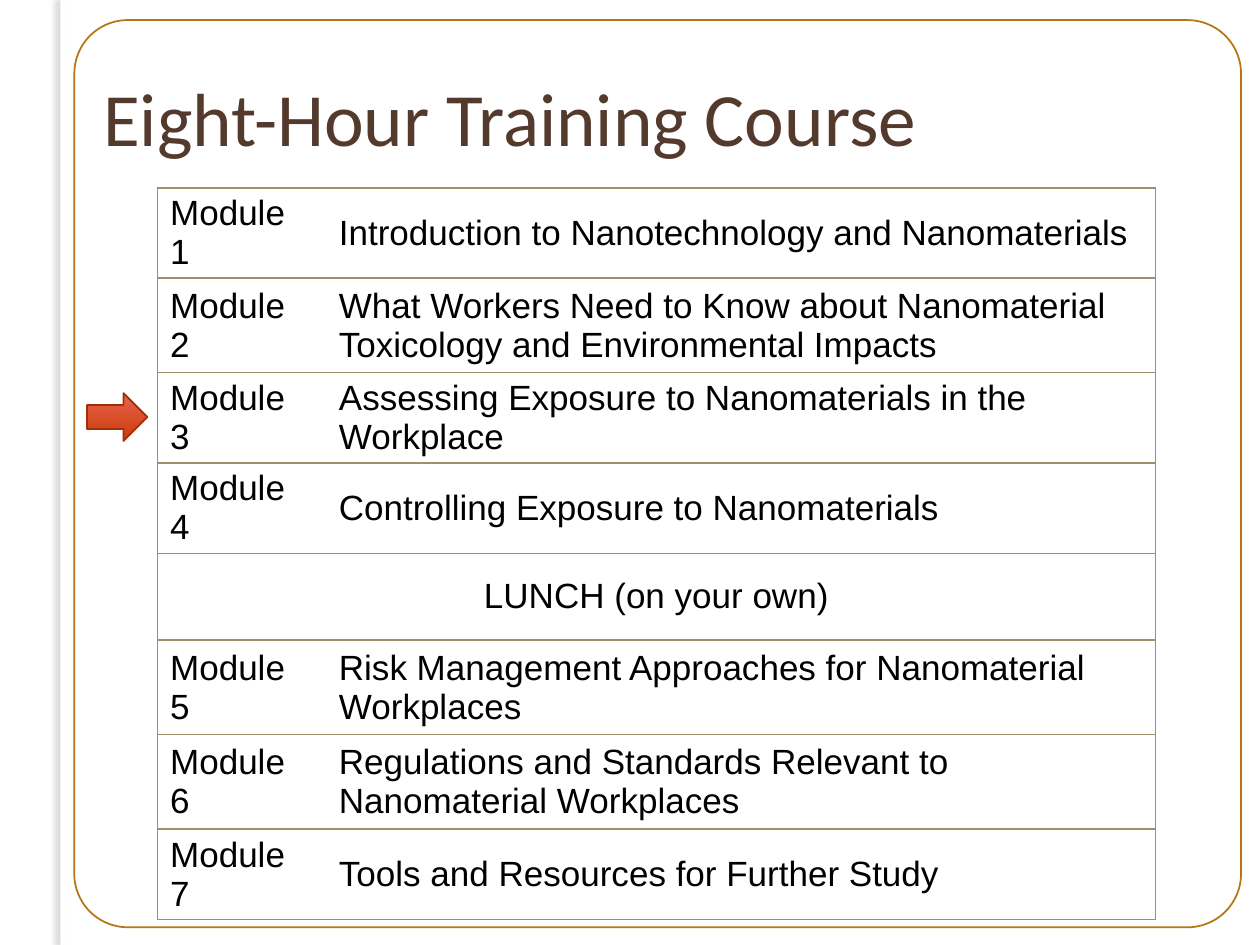
from lxml import etree
from pptx import Presentation
from pptx.dml.color import RGBColor
from pptx.enum.shapes import MSO_SHAPE as Shape
from pptx.enum.text import MSO_ANCHOR as Anchor, PP_ALIGN as Align
from pptx.oxml import parse_xml
from pptx.oxml.ns import nsdecls, qn
from pptx.util import Inches, Pt

BORDER = "A28E6A"
LUNCH = "LUNCH (on your own)"
AGENDA = [
    ("Module 1", "Introduction to Nanotechnology and Nanomaterials"),
    ("Module 2", "What Workers Need to Know about Nanomaterial Toxicology and Environmental Impacts"),
    ("Module 3", "Assessing Exposure to Nanomaterials in the Workplace"),
    ("Module 4", "Controlling Exposure to Nanomaterials"),
    (LUNCH, ""),
    ("Module 5", "Risk Management Approaches for Nanomaterial Workplaces"),
    ("Module 6", "Regulations and Standards Relevant to Nanomaterial Workplaces"),
    ("Module 7", "Tools and Resources for Further Study"),
]
TALL_ROWS = (1, 5, 6)
COLUMN_WIDTHS = (1.34, 6.58)


def color(hex_code):
    return RGBColor.from_string(hex_code)


def style_text(paragraph, font_name, size, hex_code):
    for run in paragraph.runs:
        run.font.name = font_name
        run.font.size = Pt(size)
        run.font.color.rgb = color(hex_code)


def add_shape(slide, kind, left, top, width, height, fill=None, line=None):
    shape = slide.shapes.add_shape(
        kind, Inches(left), Inches(top), Inches(width), Inches(height))
    shape.shadow.inherit = False
    if fill:
        shape.fill.solid()
        shape.fill.fore_color.rgb = color(fill)
    else:
        shape.fill.background()
    if line:
        shape.line.color.rgb = color(line)
        shape.line.width = Pt(1)
    else:
        shape.line.fill.background()
    return shape


def add_left_shadow(shape, hex_code):
    effects = shape.element.spPr.find(qn("a:effectLst"))
    effects.append(parse_xml(
        f'<a:outerShdw {nsdecls("a")} blurRad="{Pt(3)}" dist="{Pt(3)}" dir="10800000" '
        f'algn="ctr" rotWithShape="0"><a:srgbClr val="{hex_code}">'
        '<a:alpha val="25000"/></a:srgbClr></a:outerShdw>'))


def add_frame(slide):
    band = add_shape(slide, Shape.RECTANGLE, 0.48, 0, 0.08, 7.5, fill="FFFFFF")
    add_left_shadow(band, "74726D")
    outline = add_shape(slide, Shape.ROUNDED_RECTANGLE, 0.59, 0.16, 9.26, 7.2, line="B77513")
    outline.adjustments[0] = 0.059


def add_title(slide, text):
    title = slide.shapes.add_textbox(Inches(0.72), Inches(0.3), Inches(9.05), Inches(1.25))
    frame = title.text_frame
    frame.word_wrap = True
    frame.vertical_anchor = Anchor.MIDDLE
    frame.text = text
    style_text(frame.paragraphs[0], "Calibri", 43, "533A2C")


def set_borders(cell, sides):
    """Draw the given sides (letters from LRTB) and clear the others."""
    properties = cell._tc.get_or_add_tcPr()
    for position, side in enumerate("LRTB"):
        border = etree.Element(qn(f"a:ln{side}"), w=str(Pt(1)))
        if side in sides:
            fill = etree.SubElement(border, qn("a:solidFill"))
            etree.SubElement(fill, qn("a:srgbClr"), val=BORDER)
        else:
            etree.SubElement(border, qn("a:noFill"))
        properties.insert(position, border)


def fill_cell(cell, text, sides):
    cell.fill.solid()
    cell.fill.fore_color.rgb = color("FFFFFF")
    cell.vertical_anchor = Anchor.MIDDLE
    cell.margin_top = cell.margin_bottom = Pt(1.8)
    cell.text = text
    style_text(cell.text_frame.paragraphs[0], "Arial", 20, "000000")
    set_borders(cell, sides)


def add_agenda(slide):
    table = slide.shapes.add_table(
        len(AGENDA), 2, Inches(1.25), Inches(1.49), Inches(7.92), Inches(5.7)).table
    table.first_row = table.horz_banding = False
    for column, width in zip(table.columns, COLUMN_WIDTHS):
        column.width = Inches(width)
    for index, (label, topic) in enumerate(AGENDA):
        table.rows[index].height = Inches(0.75 if index in TALL_ROWS else 0.69)
        label_cell, topic_cell = table.rows[index].cells
        if label == LUNCH:
            label_cell.merge(topic_cell)
            fill_cell(label_cell, label, "LRTB")
            label_cell.text_frame.paragraphs[0].alignment = Align.CENTER
            set_borders(topic_cell, "RTB")
        else:
            fill_cell(label_cell, label, "LTB")
            fill_cell(topic_cell, topic, "RTB")


def add_current_module_arrow(slide):
    arrow = add_shape(slide, Shape.RIGHT_ARROW, 0.69, 3.12, 0.48, 0.38, line="A32F06")
    arrow.fill.gradient()
    arrow.fill.gradient_angle = 270
    for stop, hex_code in zip(arrow.fill.gradient_stops, ("E76450", "CC3B08")):
        stop.color.rgb = color(hex_code)


def main():
    deck = Presentation()
    deck.slide_width, deck.slide_height = Inches(10), Inches(7.5)
    slide = deck.slides.add_slide(deck.slide_layouts[6])
    add_frame(slide)
    add_title(slide, "Eight-Hour Training Course")
    add_agenda(slide)
    add_current_module_arrow(slide)
    deck.save("out.pptx")


if __name__ == "__main__":
    main()
